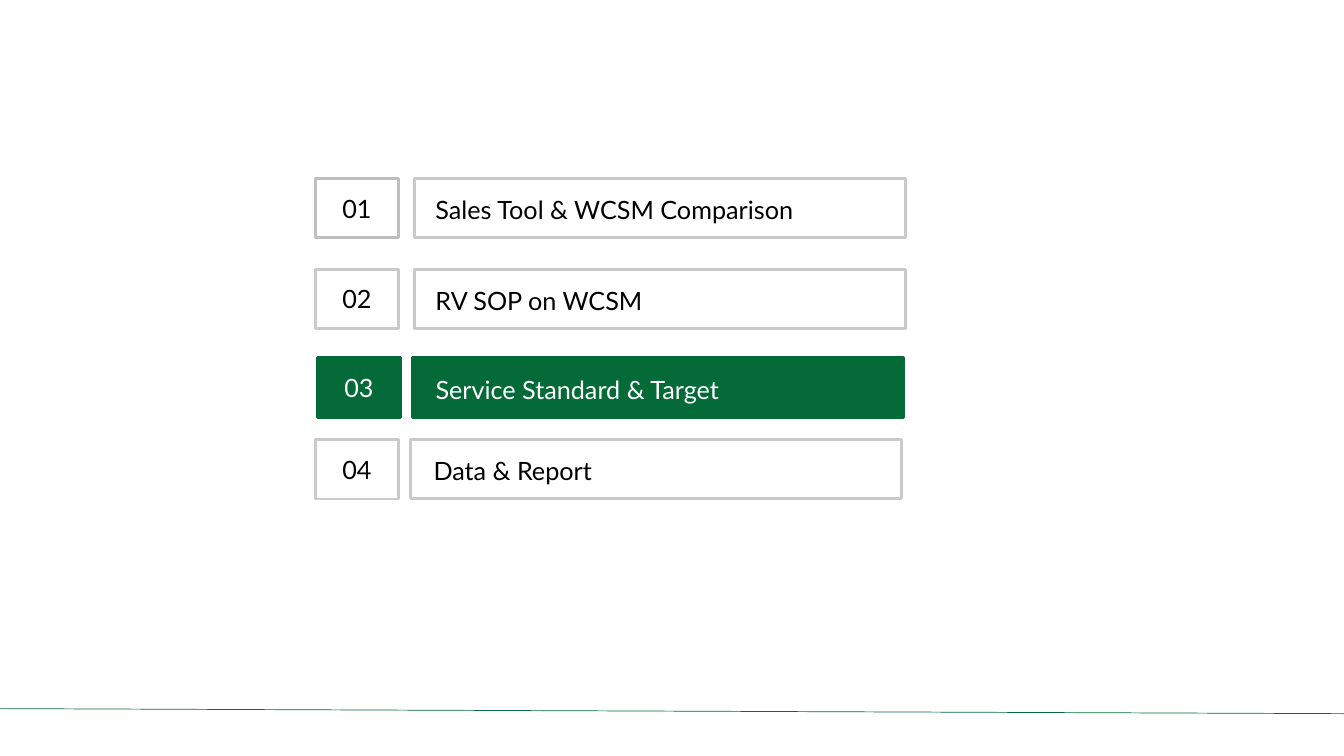
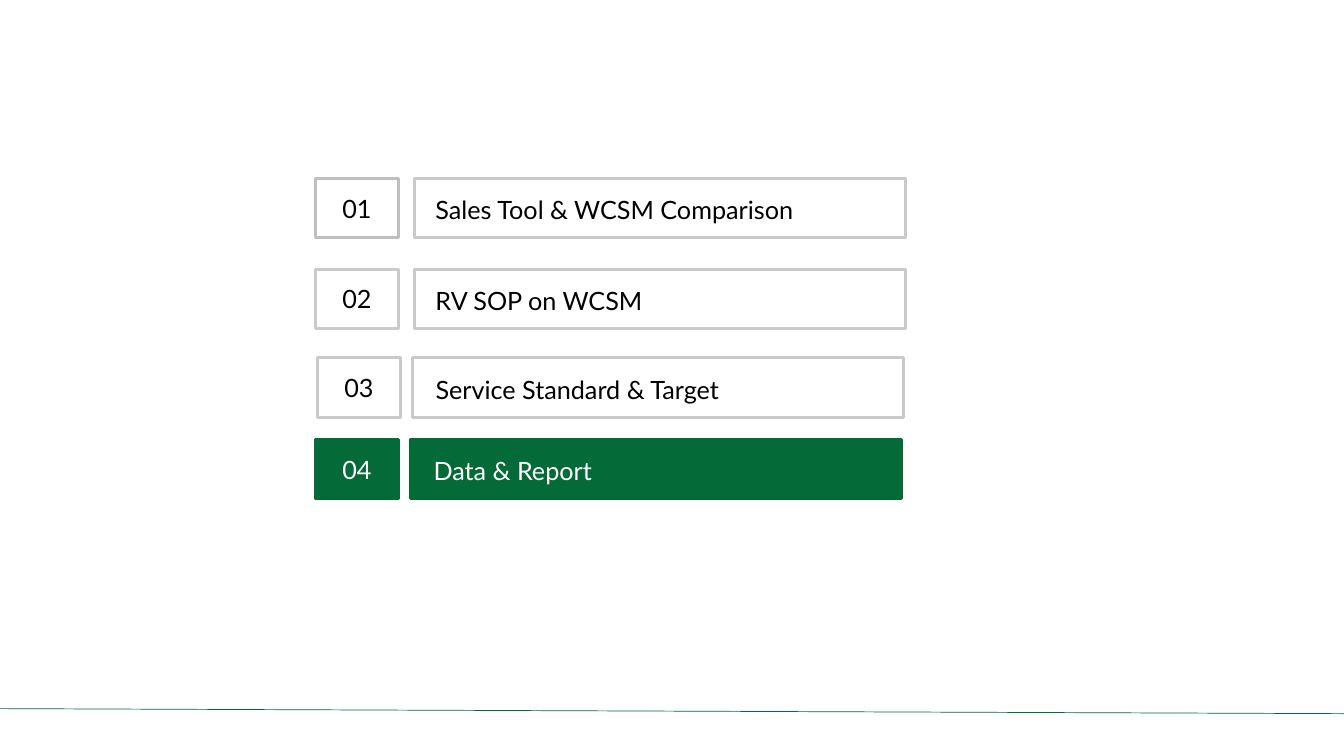
from pptx import Presentation
from pptx import util as u
from pptx.dml import color
from pptx.enum import shapes, text
from pptx.oxml import xmlchemy
from lxml import etree

COLORS = {
    "green": "046A38",
    "gray": "CACAC8",
    "mid_gray": "BFBFBF",
    "black": "000000",
    "white": "FFFFFF",
}
FONT = {"name": "Lato", "size": u.Pt(18)}
SLIDE_WIDTH, SLIDE_HEIGHT = 13.33, 7.5
AGENDA_LEFT, AGENDA_TOP = 3.13, 1.77
NUMBER_WIDTH, LABEL_WIDTH, ROW_HEIGHT = 0.82, 4.87, 0.59
NUMBER_FRAME = {
    "margin_left": 0, "margin_right": 0, "margin_top": 0, "margin_bottom": 0,
    "vertical_anchor": text.MSO_ANCHOR.MIDDLE, "word_wrap": True,
}
LABEL_FRAME = {
    "margin_top": u.Inches(0.16), "margin_bottom": 0,
    "vertical_anchor": text.MSO_ANCHOR.TOP, "word_wrap": False,
}
AGENDA = [
    {"label": "Sales Tool & WCSM Comparison", "top": 0, "number_left": 0,
     "label_left": 0.98, "text_left": 1.19, "number_line": "mid_gray"},
    {"label": "RV SOP on WCSM", "top": 0.9, "number_left": 0,
     "label_left": 0.98, "text_left": 1.19, "number_line": "gray"},
    {"label": "Service Standard & Target", "top": 1.78, "number_left": 0.02,
     "label_left": 0.96, "text_left": 1.19, "number_line": "gray"},
    {"label": "Data & Report", "top": 2.59, "number_left": 0,
     "label_left": 0.94, "text_left": 1.17, "number_line": "gray"},
]


def rgb(name):
    return color.RGBColor.from_string(COLORS[name])


def apply(target, values):
    for name, value in values.items():
        setattr(target, name, value)


def add_box(slide, left, top, width, content, active, line, line_width, frame, align):
    shape = slide.shapes.add_shape(
        shapes.MSO_SHAPE.RECTANGLE, u.Inches(left), u.Inches(top),
        u.Inches(width), u.Inches(ROW_HEIGHT))
    shape.shadow.inherit = False
    if active:
        shape.fill.solid()
        shape.fill.fore_color.rgb = rgb("green")
    else:
        shape.fill.background()
    shape.line.color.rgb = rgb("green" if active else line)
    shape.line.width = u.Pt(line_width)
    apply(shape.text_frame, frame)
    paragraph = shape.text_frame.paragraphs[0]
    paragraph.alignment = align
    run = paragraph.add_run()
    run.text = content
    apply(run.font, FONT)
    run.font.color.rgb = rgb("white" if active else "black")


def add_agenda(slide, left, top, current):
    for number, row in enumerate(AGENDA, 1):
        active = number == current
        row_top = top + row["top"]
        add_box(slide, left + row["number_left"], row_top, NUMBER_WIDTH, f"{number:02d}",
                active, row["number_line"], 2, NUMBER_FRAME, text.PP_ALIGN.CENTER)
        inset = u.Inches(row["text_left"] - row["label_left"])
        add_box(slide, left + row["label_left"], row_top, LABEL_WIDTH, row["label"],
                active, "gray", 2.25, {**LABEL_FRAME, "margin_left": inset},
                text.PP_ALIGN.LEFT)


def add_footer_line(slide):
    line = slide.shapes.add_connector(
        shapes.MSO_CONNECTOR.STRAIGHT, 0, u.Inches(7.03),
        u.Inches(SLIDE_WIDTH), u.Inches(7.08))
    line.line.color.rgb = rgb("green")
    line.line.width = u.Pt(0.5)
    etree.SubElement(line.element.spPr, xmlchemy.qn("a:effectLst"))


def add_agenda_slide(presentation, current):
    slide = presentation.slides.add_slide(presentation.slide_layouts[6])
    add_footer_line(slide)
    add_agenda(slide, AGENDA_LEFT, AGENDA_TOP, current)


def main():
    presentation = Presentation()
    presentation.slide_width = u.Inches(SLIDE_WIDTH)
    presentation.slide_height = u.Inches(SLIDE_HEIGHT)
    for current in (3, 4):
        add_agenda_slide(presentation, current)
    presentation.save("out.pptx")


if __name__ == "__main__":
    main()
